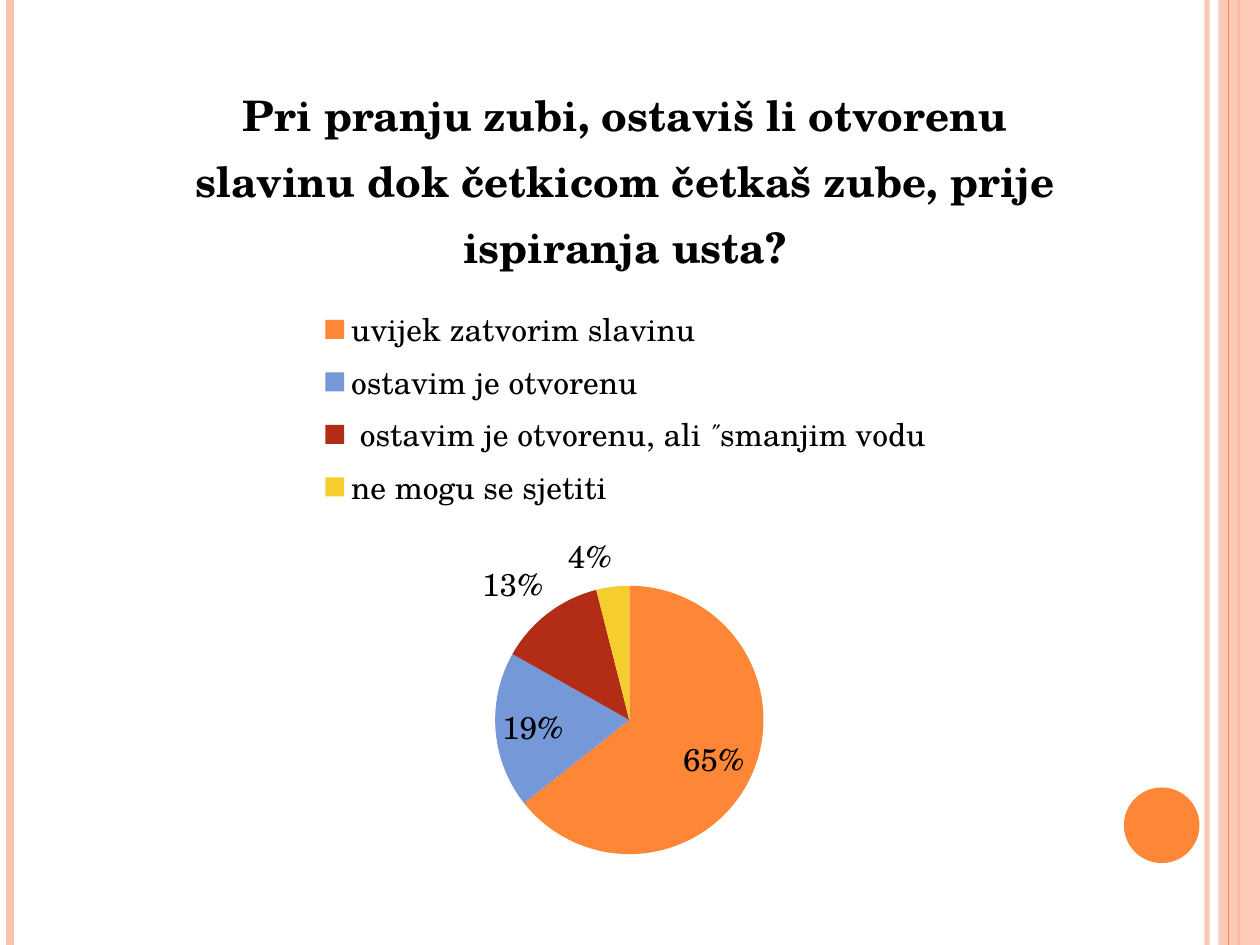
import pptx
import pptx.util
import pptx.chart.data
import pptx.dml.color
import pptx.enum.chart
import pptx.enum.shapes
import pptx.enum.text
import pptx.oxml
import pptx.oxml.ns

Inches = pptx.util.Inches
Pt = pptx.util.Pt
RGB = pptx.dml.color.RGBColor
qn = pptx.oxml.ns.qn

ORANGE = RGB(0xFE, 0x86, 0x37)
PEACH = RGB(0xFE, 0xC3, 0xAE)
BLUE = RGB(0x75, 0x98, 0xD9)
RED = RGB(0xB3, 0x2C, 0x16)
YELLOW = RGB(0xF5, 0xCD, 0x2D)
BLACK = RGB(0, 0, 0)
FACE = "TeX Gyre Schola"

TITLE = ("Pri pranju zubi, ostaviš li otvorenu slavinu dok četkicom "
         "četkaš zube, prije ispiranja usta?")
# Answer, rounded share in percent, slice colour
SHARES = [
    ("uvijek zatvorim slavinu", 65, ORANGE),
    ("ostavim je otvorenu", 19, BLUE),
    (" ostavim je otvorenu, ali ˝smanjim vodu", 13, RED),
    ("ne mogu se sjetiti", 4, YELLOW),
]


def style(font, size=18, bold=False, color=BLACK):
    font.name = FACE
    font.size = Pt(size)
    font.bold = bold
    font.color.rgb = color


def write(frame, text, align=pptx.enum.text.PP_ALIGN.CENTER, **form):
    para = frame.paragraphs[0]
    para.alignment = align
    run = para.add_run()
    run.text = text
    style(run.font, **form)


def fade(shape, percent):
    """Set the opacity of the shape's first plain colour."""
    color = next(shape._element.spPr.iter(qn("a:srgbClr")))
    alpha = color.makeelement(qn("a:alpha"), {"val": str(percent * 1000)})
    color.append(alpha)


def stripe(slide, x, top, height, color, width):
    line = slide.shapes.add_connector(
        pptx.enum.shapes.MSO_CONNECTOR.STRAIGHT,
        Inches(x), Inches(top), Inches(x), Inches(top + height))
    line.line.color.rgb = color
    line.line.width = Pt(width)
    props = line._element.spPr
    props.append(props.makeelement(qn("a:effectLst"), {}))
    return line


def solid(slide, kind, box, color):
    shape = slide.shapes.add_shape(kind, *map(Inches, box))
    shape.shadow.inherit = False
    shape.fill.solid()
    shape.fill.fore_color.rgb = color
    shape.line.fill.background()
    return shape


def frame(slide, left, top, width, height):
    """Edge stripes, right band and dot."""
    kinds = pptx.enum.shapes.MSO_SHAPE
    right = left + width
    fade(stripe(slide, right - 0.42, top, height, PEACH, 3), 93)
    stripe(slide, left + 0.08, top, height, PEACH, 4.5)
    stripe(slide, right - 0.17, top, height, ORANGE, 1.5)
    band = (right - 0.33, top, 0.33, height)
    fade(solid(slide, kinds.RECTANGLE, band, PEACH), 87)
    stripe(slide, right - 0.25, top, height, ORANGE, 0.75)
    dot = (right - 1.08, top + height - 1.25, 0.6, 0.6)
    solid(slide, kinds.OVAL, dot, ORANGE)


def place(part, size, spots, after=None, inner=False):
    """Fix a chart part at x, y (and w, h) in inches within the chart."""
    for old in part.findall(qn("c:layout")):
        part.remove(old)
    tags = '<c:layoutTarget val="inner"/>' if inner else ""
    tags += "".join(f'<c:{key}Mode val="edge"/>' for key in "xy")
    for key, spot, whole in zip("xywh", spots, size * 2):
        tags += f'<c:{key} val="{spot / whole}"/>'
    layout = pptx.oxml.parse_xml(
        f'<c:layout {pptx.oxml.ns.nsdecls("c")}>'
        f"<c:manualLayout>{tags}</c:manualLayout></c:layout>")
    if after is None:
        part.insert(0, layout)
    else:
        part.find(qn(after)).addnext(layout)


def survey(slide, left, top, width, height):
    """Pie chart with its title and legend."""
    size = (width, height)
    data = pptx.chart.data.CategoryChartData()
    data.categories = [name for name, _, _ in SHARES]
    data.add_series(TITLE, [share for _, share, _ in SHARES])
    enum = pptx.enum.chart
    chart = slide.shapes.add_chart(
        enum.XL_CHART_TYPE.PIE, Inches(left), Inches(top),
        Inches(width), Inches(height), data).chart
    style(chart.font)

    # Title
    chart.has_title = True
    write(chart.chart_title.text_frame, TITLE, size=24, bold=True)
    chart.chart_title.include_in_layout = False
    place(chart.chart_title._element, size, (1.14, 0.19), after="c:tx")

    # Legend
    chart.has_legend = True
    chart.legend.position = enum.XL_LEGEND_POSITION.TOP
    chart.legend.include_in_layout = False
    style(chart.legend.font)
    place(chart.legend._element, size, (2.13, 2.02, 4.97, 1.72),
          after="c:legendPos")

    # Slices and labels
    plot = chart.plots[0]
    plot.vary_by_categories = True
    for spot, (_, _, color) in enumerate(SHARES):
        fill = plot.series[0].points[spot].format.fill
        fill.solid()
        fill.fore_color.rgb = color
    plot.has_data_labels = True
    labels = plot.data_labels
    labels.show_value = True
    labels.number_format = '0"%"'
    labels.number_format_is_linked = False
    labels.position = enum.XL_LABEL_POSITION.BEST_FIT
    style(labels.font)
    area = chart._chartSpace.chart.plotArea
    place(area, size, (3.58, 4.29, 2.13, 2.13), inner=True)


def main():
    deck = pptx.Presentation()
    deck.slide_width = Inches(10)
    deck.slide_height = Inches(7.5)
    slide = deck.slides.add_slide(deck.slide_layouts[6])
    frame(slide, 0, 0, 10, 7.5)
    survey(slide, 0.35, 0.36, 9.21, 6.61)
    deck.save("out.pptx")


if __name__ == "__main__":
    main()
